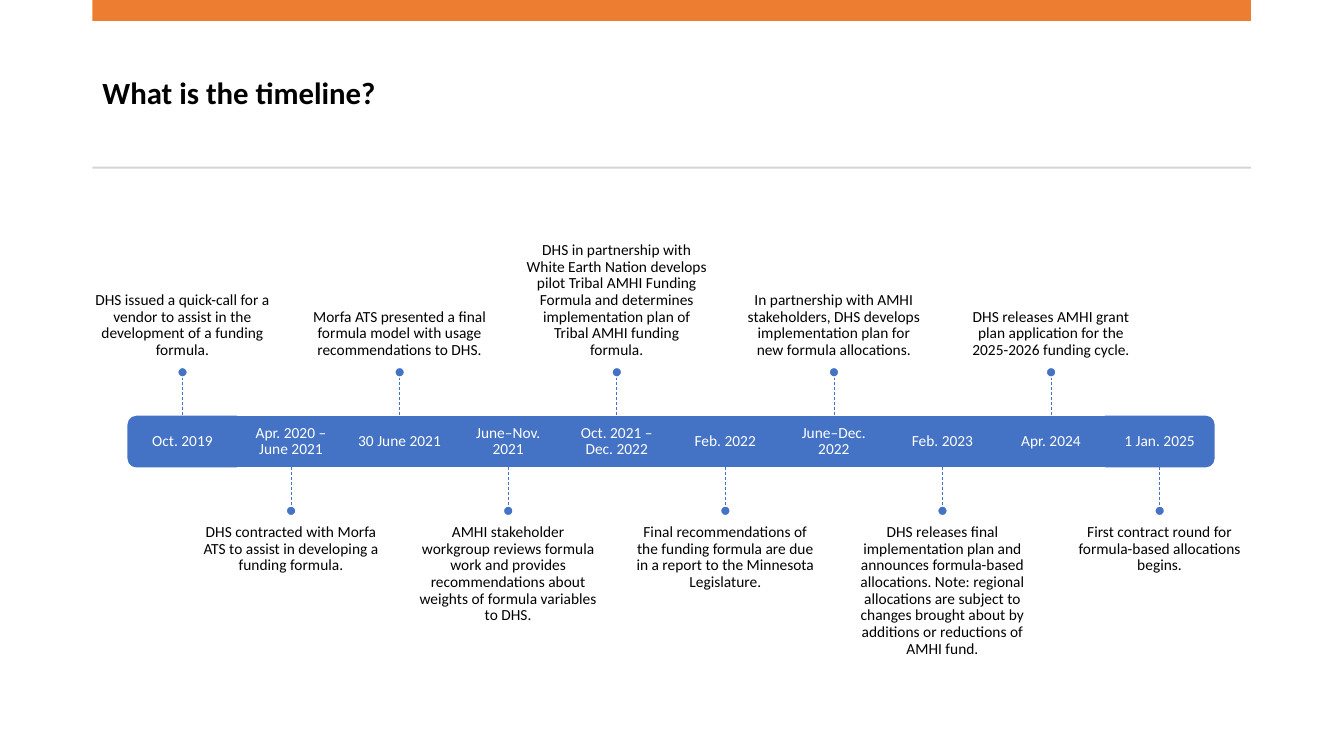
from lxml.etree import SubElement
from pptx import Presentation
from pptx.dml.color import RGBColor
from pptx.enum.dml import MSO_LINE
from pptx.enum.shapes import MSO_CONNECTOR, MSO_SHAPE as Form
from pptx.enum.text import MSO_ANCHOR as Anchor, PP_ALIGN as Align
from pptx.oxml.ns import qn
from pptx.util import Pt

FONT = "Calibri"
BLUE, ORANGE, GRAY, BLACK, WHITE = "4472C4", "ED7D31", "D5D5D5", "000000", "FFFFFF"

SLOT_LEFT, SLOT_WIDTH = 91.6, 77.55
BAR_TOP, BAR_HEIGHT = 297.4, 36
STEM, DOT = 28, 7
NOTE_WIDTH, NOTE_HEIGHT = 129.5, 125.3
INSET = 6.2

EVENTS = [
    ("Oct. 2019", "DHS issued a quick-call for a vendor to assist in the "
     "development of a funding formula."),
    ("Apr. 2020 – June 2021", "DHS contracted with Morfa ATS to assist in "
     "developing a funding formula."),
    ("30 June 2021", "Morfa ATS presented a final formula model with usage "
     "recommendations to DHS."),
    ("June–Nov. 2021", "AMHI stakeholder workgroup reviews formula work and "
     "provides recommendations about weights of formula variables to DHS."),
    ("Oct. 2021 – Dec. 2022", "DHS in partnership with White Earth Nation "
     "develops pilot Tribal AMHI Funding Formula and determines "
     "implementation plan of Tribal AMHI funding formula."),
    ("Feb. 2022", "Final recommendations of the funding formula are due in a "
     "report to the Minnesota Legislature."),
    ("June–Dec. 2022", "In partnership with AMHI stakeholders, DHS develops "
     "implementation plan for new formula allocations."),
    ("Feb. 2023", "DHS releases final implementation plan and announces "
     "formula-based allocations. Note: regional allocations are subject to "
     "changes brought about by additions or reductions of AMHI fund."),
    ("Apr. 2024", "DHS releases AMHI grant plan application for the 2025-2026 "
     "funding cycle."),
    ("1 Jan. 2025", "First contract round for formula-based allocations begins."),
]


def color(code):
    return RGBColor.from_string(code)


def write(frame, text, size, code, align, anchor, bold=False):
    frame.word_wrap = True
    frame.vertical_anchor = anchor
    para = frame.paragraphs[0]
    para.alignment = align
    para.line_spacing = 0.9
    span = para.add_run()
    span.text = text
    span.font.name = FONT
    span.font.size = Pt(size)
    span.font.bold = bold
    span.font.color.rgb = color(code)


def add_title(page, text):
    title = page.shapes.title
    title.left, title.top, title.width, title.height = Pt(66), Pt(25), Pt(827.5), Pt(85)
    write(title.text_frame, text, 22, BLACK, Align.LEFT, Anchor.MIDDLE, bold=True)


def add_text(page, text, code, anchor, left, top, width, height, insets):
    """Add centred text; insets are left, top, right, bottom."""
    box = page.shapes.add_textbox(Pt(left), Pt(top), Pt(width), Pt(height))
    frame = box.text_frame
    (frame.margin_left, frame.margin_top,
     frame.margin_right, frame.margin_bottom) = map(Pt, insets)
    write(frame, text, 11, code, Align.CENTER, anchor)


def add_filled(page, form, fill, left, top, width, height, line=None):
    shape = page.shapes.add_shape(form, Pt(left), Pt(top), Pt(width), Pt(height))
    shape.shadow.inherit = False
    shape.fill.solid()
    shape.fill.fore_color.rgb = color(fill)
    if line:
        shape.line.color.rgb = color(line)
        shape.line.width = Pt(1)
    else:
        shape.line.fill.background()
    return shape


def add_stem(page, x, top):
    stem = page.shapes.add_connector(
        MSO_CONNECTOR.STRAIGHT, Pt(x), Pt(top), Pt(x), Pt(top + STEM))
    stem.line.color.rgb = color(BLUE)
    stem.line.width = Pt(0.5)
    stem.line.dash_style = MSO_LINE.DASH
    SubElement(stem._element.spPr, qn("a:effectLst"))


def add_slot(page, index, center):
    """Add one piece of the bar, rounded outwards at both ends."""
    turns = {0: 270, len(EVENTS) - 1: 90}
    if index in turns:
        middle = BAR_TOP + BAR_HEIGHT / 2
        end = add_filled(page, Form.ROUND_2_SAME_RECTANGLE, BLUE,
                         center - BAR_HEIGHT / 2, middle - SLOT_WIDTH / 2,
                         BAR_HEIGHT, SLOT_WIDTH, BLUE)
        end.rotation = turns[index]
    else:
        add_filled(page, Form.RECTANGLE, BLUE, center - SLOT_WIDTH / 2, BAR_TOP,
                   SLOT_WIDTH, BAR_HEIGHT, BLUE)


def add_event(page, index, date, note):
    center = SLOT_LEFT + SLOT_WIDTH * (index + 0.5)
    if index % 2 == 0:
        stem_top = BAR_TOP - STEM
        dot_top = stem_top - DOT
        note_top = dot_top - NOTE_HEIGHT
        anchor, insets = Anchor.BOTTOM, (0, 0, 0, INSET)
    else:
        stem_top = BAR_TOP + BAR_HEIGHT
        dot_top = stem_top + STEM
        note_top = dot_top + DOT
        anchor, insets = Anchor.TOP, (0, INSET, 0, 0)
    add_slot(page, index, center)
    add_text(page, date, WHITE, Anchor.MIDDLE, center - SLOT_WIDTH / 2, BAR_TOP,
             SLOT_WIDTH, BAR_HEIGHT, [INSET] * 4)
    add_text(page, note, BLACK, anchor, center - NOTE_WIDTH / 2, note_top,
             NOTE_WIDTH, NOTE_HEIGHT, insets)
    add_stem(page, center, stem_top)
    add_filled(page, Form.OVAL, BLUE, center - DOT / 2, dot_top, DOT, DOT, WHITE)


def main():
    deck = Presentation()
    deck.slide_width, deck.slide_height = Pt(960), Pt(540)
    page = deck.slides.add_slide(deck.slide_layouts[5])
    add_title(page, "What is the timeline?")
    add_filled(page, Form.RECTANGLE, ORANGE, 66, 0, 827.5, 15)
    add_filled(page, Form.RECTANGLE, GRAY, 66, 119, 827.5, 1.4)
    for index, (date, note) in enumerate(EVENTS):
        add_event(page, index, date, note)
    deck.save("out.pptx")


if __name__ == "__main__":
    main()
